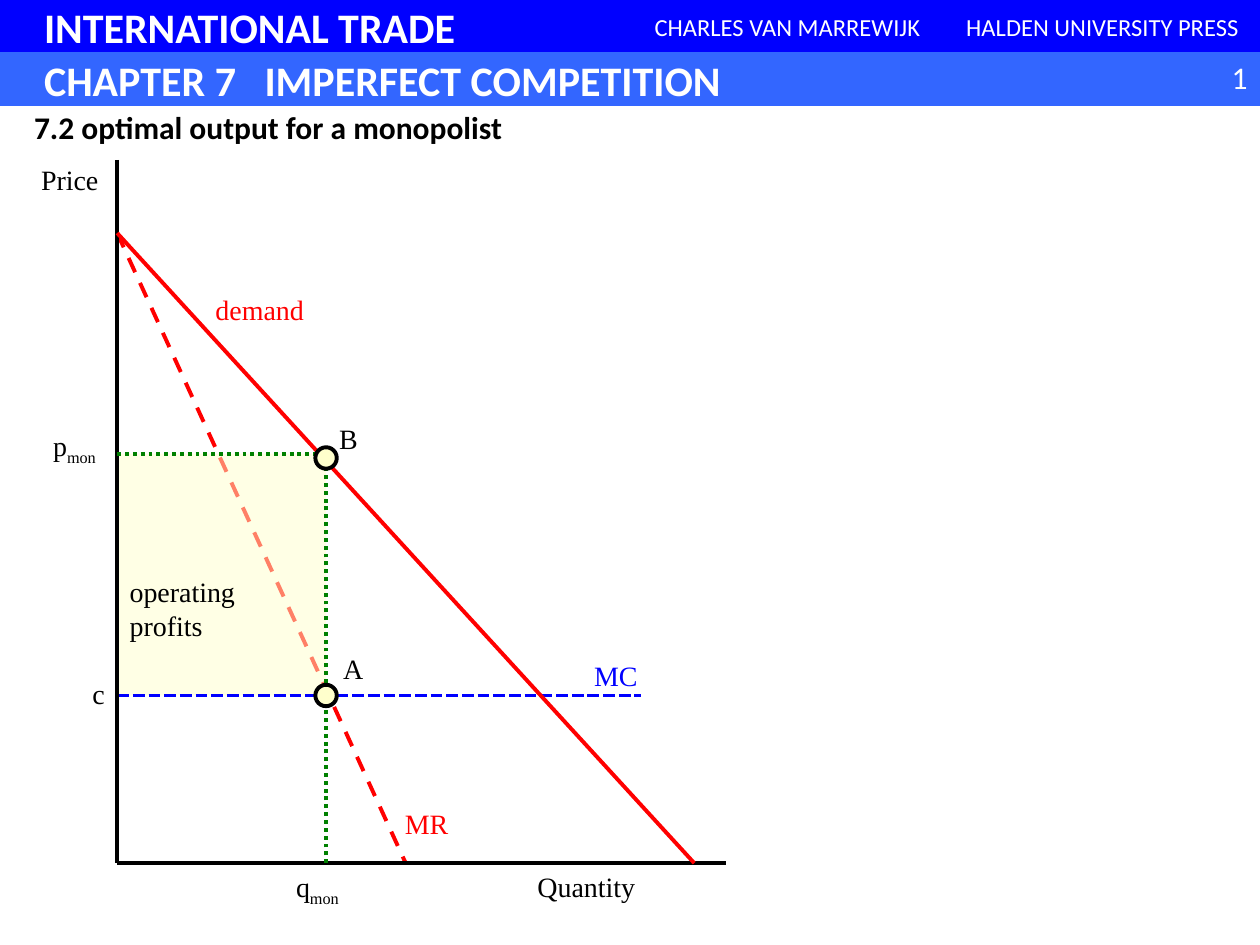
from pptx import Presentation
from pptx.dml.color import RGBColor
from pptx.enum.dml import MSO_LINE as DASH
from pptx.enum.shapes import MSO_CONNECTOR, MSO_SHAPE as SHAPE
from pptx.enum.text import MSO_ANCHOR as ANCHOR, MSO_AUTO_SIZE as FIT, PP_ALIGN as ALIGN
from pptx.oxml.xmlchemy import OxmlElement
from pptx.util import Inches, Pt

BLACK = RGBColor(0x00, 0x00, 0x00)
WHITE = RGBColor(0xFF, 0xFF, 0xFF)
RED = RGBColor(0xFF, 0x00, 0x00)
GREEN = RGBColor(0x00, 0x80, 0x00)
BLUE = RGBColor(0x00, 0x00, 0xFF)
LIGHT_BLUE = RGBColor(0x33, 0x66, 0xFF)
CREAM = RGBColor(0xFF, 0xFF, 0xCC)

SANS, SERIF = "Calibri", "Times New Roman"
WIDTH, HEIGHT = 10, 7.5
BAR = 0.42
LABEL_HEIGHT = 0.4

# Graph units: the demand curve meets both axes at 100.
ORIGIN_X, ORIGIN_Y = 0.93, 6.85
QUANTITY_UNIT, PRICE_UNIT = 0.0458, 0.05
Q_MON, P_MON, COST = 36.2, 65, 26.6


def graph(quantity, price):
    """Turn graph units into inches on the slide."""
    return ORIGIN_X + quantity * QUANTITY_UNIT, ORIGIN_Y - price * PRICE_UNIT


def box(left, top, width, height):
    return [Inches(value) for value in (left, top, width, height)]


def write(frame, text, font=SERIF, size=16, color=BLACK, bold=False,
          align=ALIGN.CENTER, anchor=ANCHOR.TOP, wrap=False, fit=FIT.NONE, sub=None):
    """Fill a text frame, one paragraph per line; sub is a closing subscript."""
    frame.word_wrap = wrap
    frame.auto_size = fit
    frame.vertical_anchor = anchor
    for number, line in enumerate(text.split("\n")):
        paragraph = frame.add_paragraph() if number else frame.paragraphs[0]
        paragraph.alignment = align
        for part in filter(None, (line, sub)):
            run = paragraph.add_run()
            run.text = part
            run.font.name, run.font.size, run.font.bold = font, Pt(size), bold
            run.font.color.rgb = color
            if part == sub:
                run.font._element.set("baseline", "-25000")


def filled(slide, kind, place, fill, outline=None, weight=0.75):
    shape = slide.shapes.add_shape(kind, *box(*place))
    shape.shadow.inherit = False
    shape.fill.solid()
    shape.fill.fore_color.rgb = fill
    if outline is None:
        shape.line.fill.background()
    else:
        shape.line.color.rgb = outline
        shape.line.width = Pt(weight)
    return shape


def header(slide, place, text, fill, inset=0.1, tab=None, **style):
    frame = filled(slide, SHAPE.RECTANGLE, place, fill, fill).text_frame
    frame.margin_left = Inches(inset)
    write(frame, text, font=SANS, color=WHITE, anchor=ANCHOR.MIDDLE, wrap=True, **style)
    if tab:
        stops, stop = OxmlElement("a:tabLst"), OxmlElement("a:tab")
        stop.set("pos", str(Inches(tab)))
        stop.set("algn", "l")
        stops.append(stop)
        frame.paragraphs[0]._p.get_or_add_pPr().append(stops)


def curve(slide, start, end, color, dash=None):
    ends = [Inches(value) for point in (start, end) for value in graph(*point)]
    line = slide.shapes.add_connector(MSO_CONNECTOR.STRAIGHT, *ends)
    line.line.color.rgb = color
    line.line.width = Pt(2.25)
    if dash:
        line.line.dash_style = dash
    line._element.spPr.append(OxmlElement("a:effectLst"))


def label(slide, text, center, width, **style):
    x, y = graph(*center)
    place = box(x - width / 2, y - LABEL_HEIGHT / 2, width, LABEL_HEIGHT)
    write(slide.shapes.add_textbox(*place).text_frame, text,
          fit=FIT.SHAPE_TO_FIT_TEXT, **style)


def marker(slide, point, size=0.17):
    x, y = graph(*point)
    filled(slide, SHAPE.OVAL, (x - size / 2, y - size / 2, size, size), CREAM, BLACK, 2.25)


def profit_area(slide):
    left, top = graph(0, P_MON)
    right, bottom = graph(Q_MON, COST)
    area = filled(slide, SHAPE.RECTANGLE, (left, top, right - left, bottom - top), CREAM)
    alpha = OxmlElement("a:alpha")
    alpha.set("val", "50000")
    area.fill._xPr.solidFill[0].append(alpha)
    area.text_frame.margin_top = Inches(0.58)
    write(area.text_frame, "operating\nprofits", align=ALIGN.LEFT,
          anchor=ANCHOR.MIDDLE, wrap=True)


def headings(slide):
    quarter = WIDTH / 4
    main_style = dict(inset=0.35, size=24, bold=True, align=ALIGN.LEFT)
    header(slide, (0, 0, WIDTH, BAR), "INTERNATIONAL TRADE", BLUE, **main_style)
    for column, name in ((2, "CHARLES VAN MARREWIJK"), (3, "HALDEN UNIVERSITY PRESS")):
        header(slide, (column * quarter, 0, quarter, BAR), name, BLUE, size=14)
    header(slide, (0, BAR, WIDTH, BAR), "CHAPTER 7\tIMPERFECT COMPETITION",
           LIGHT_BLUE, tab=1.75, **main_style)
    page = slide.shapes.add_textbox(*box(WIDTH - 0.67, 0.41, 0.67, LABEL_HEIGHT))
    write(page.text_frame, "1", font=SANS, size=18, color=WHITE, align=ALIGN.RIGHT)

    title = slide.shapes.title
    title.left, title.top, title.width, title.height = box(0.17, 0.81, 3.95, LABEL_HEIGHT)
    write(title.text_frame, "7.2 optimal output for a monopolist", font=SANS, size=18,
          bold=True, align=ALIGN.LEFT)


def diagram(slide):
    curve(slide, (0, 100), (50, 0), RED, DASH.DASH)
    profit_area(slide)
    curve(slide, (0, COST), (90.8, COST), BLUE, DASH.SQUARE_DOT)
    slide.shapes[-1].line._ln.prstDash.set("val", "sysDash")
    curve(slide, (0, 111.6), (0, 0), BLACK)
    curve(slide, (0, 0), (105.5, 0), BLACK)
    curve(slide, (0, 100), (100, 0), RED)
    for start in ((Q_MON, 0), (0, P_MON)):
        curve(slide, start, (Q_MON, P_MON), GREEN, DASH.ROUND_DOT)
    for price in (64.3, COST):
        marker(slide, (Q_MON, price))

    label(slide, "Price", (-8.2, 108.2), 0.77)
    label(slide, "Quantity", (81.3, -4), 1.13)
    label(slide, "demand", (24.7, 87.6), 1.1, color=RED)
    label(slide, "MR", (53.6, 6), 0.59, color=RED)
    label(slide, "MC", (86.4, 29.4), 0.59, color=BLUE)
    label(slide, "q", (34.7, -4), 0.66, sub="mon")
    label(slide, "p", (-7.4, 66), 0.66, sub="mon")
    label(slide, "c", (-3.2, COST), 0.33)
    label(slide, "A", (40.9, 30.6), 0.37)
    label(slide, "B", (40.1, 67), 0.37)


def main():
    deck = Presentation()
    deck.slide_width, deck.slide_height = Inches(WIDTH), Inches(HEIGHT)
    slide = deck.slides.add_slide(deck.slide_layouts.get_by_name("Title Only"))
    headings(slide)
    diagram(slide)
    deck.save("out.pptx")


if __name__ == "__main__":
    main()
